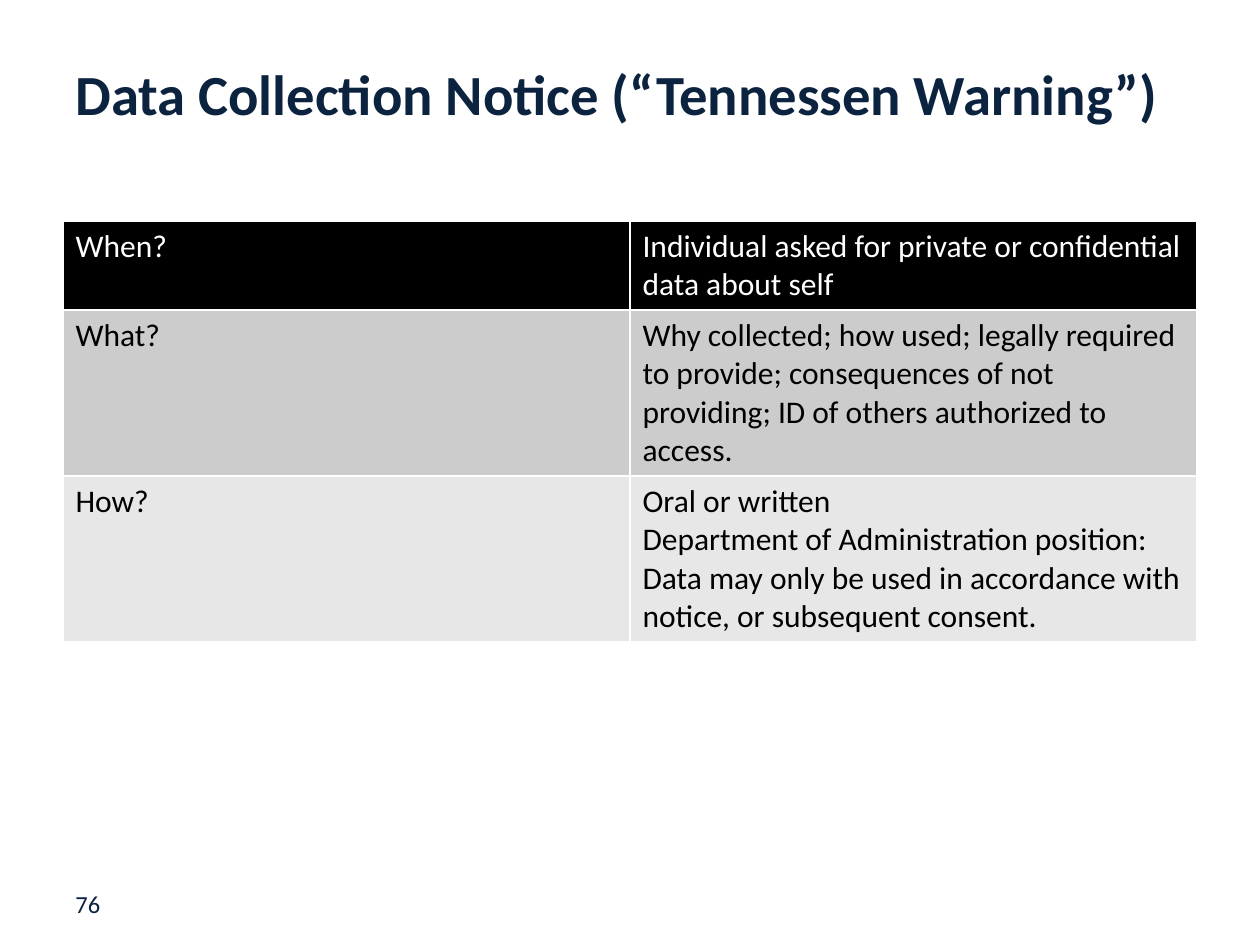
from lxml import etree
from pptx import Presentation
from pptx.dml.color import RGBColor
from pptx.enum.text import MSO_ANCHOR
from pptx.oxml.ns import qn
from pptx.util import Pt

TOP = MSO_ANCHOR.TOP
MIDDLE = MSO_ANCHOR.MIDDLE
EMU_PER_PX = 914400 / 126
FONT = "Calibri"
COLORS = {
    "navy": "0C2340",
    "black": "000000",
    "white": "FFFFFF",
    "gray": "CCCCCC",
    "light": "E7E7E7",
}
NOTICE_ROWS = [
    ("When?", "Individual asked for private or confidential data about self"),
    (
        "What?",
        "Why collected; how used; legally required to provide; consequences of "
        "not providing; ID of others authorized to access.",
    ),
    (
        "How?",
        "Oral or written\nDepartment of Administration position: Data may only be "
        "used in accordance with notice, or subsequent consent.",
    ),
]
ROW_STYLES = [("black", "white"), ("gray", "black"), ("light", "black")]
ROW_HEIGHTS = [89, 166, 166]


def px(length):
    """Turn pixels into EMU."""
    return round(length * EMU_PER_PX)


def write_text(text_frame, text, size=18, color="black", bold=False):
    """Fill a text frame with one formatted paragraph per line."""
    text_frame.word_wrap = True
    for index, line in enumerate(text.split("\n")):
        paragraph = text_frame.paragraphs[0] if index == 0 else text_frame.add_paragraph()
        run = paragraph.add_run()
        run.text = line
        run.font.name = FONT
        run.font.size = Pt(size)
        run.font.bold = bold
        run.font.color.rgb = RGBColor.from_string(COLORS[color])


def add_label(slide, box, text, anchor=TOP, **text_format):
    """Place a text box in the given box."""
    shape = slide.shapes.add_textbox(*map(px, box))
    shape.text_frame.vertical_anchor = anchor
    write_text(shape.text_frame, text, **text_format)


def add_borders(cell, color, width):
    """Draw a solid line on all four sides of a cell."""
    properties = cell._tc.get_or_add_tcPr()
    for side in ("lnL", "lnR", "lnT", "lnB"):
        line = etree.SubElement(properties, qn(f"a:{side}"), w=str(Pt(width)))
        fill = etree.SubElement(line, qn("a:solidFill"))
        etree.SubElement(fill, qn("a:srgbClr"), val=COLORS[color])


def add_notice_table(slide, box):
    """Place the notice table with equal columns in the given box."""
    column_count = len(NOTICE_ROWS[0])
    table = slide.shapes.add_table(len(NOTICE_ROWS), column_count, *map(px, box)).table
    for column in table.columns:
        column.width = px(box[2] // column_count)
    for row, height, texts, (fill, color) in zip(
        table.rows, ROW_HEIGHTS, NOTICE_ROWS, ROW_STYLES
    ):
        row.height = px(height)
        for cell, text in zip(row.cells, texts):
            add_borders(cell, "white", 1)
            cell.fill.solid()
            cell.fill.fore_color.rgb = RGBColor.from_string(COLORS[fill])
            write_text(cell.text_frame, text, color=color)


def main():
    """Build the slide and save it."""
    presentation = Presentation()
    presentation.slide_width = px(1260)
    presentation.slide_height = px(945)
    slide = presentation.slides.add_slide(presentation.slide_layouts[6])
    add_label(slide, (63, 882, 273, 43), "76", anchor=MIDDLE, size=14, color="navy")
    add_label(
        slide,
        (63, 53, 1124, 147),
        "Data Collection Notice (“Tennessen Warning”)",
        size=32.4,
        color="navy",
        bold=True,
    )
    add_notice_table(slide, (63, 221, 1134, sum(ROW_HEIGHTS)))
    presentation.save("out.pptx")


if __name__ == "__main__":
    main()
